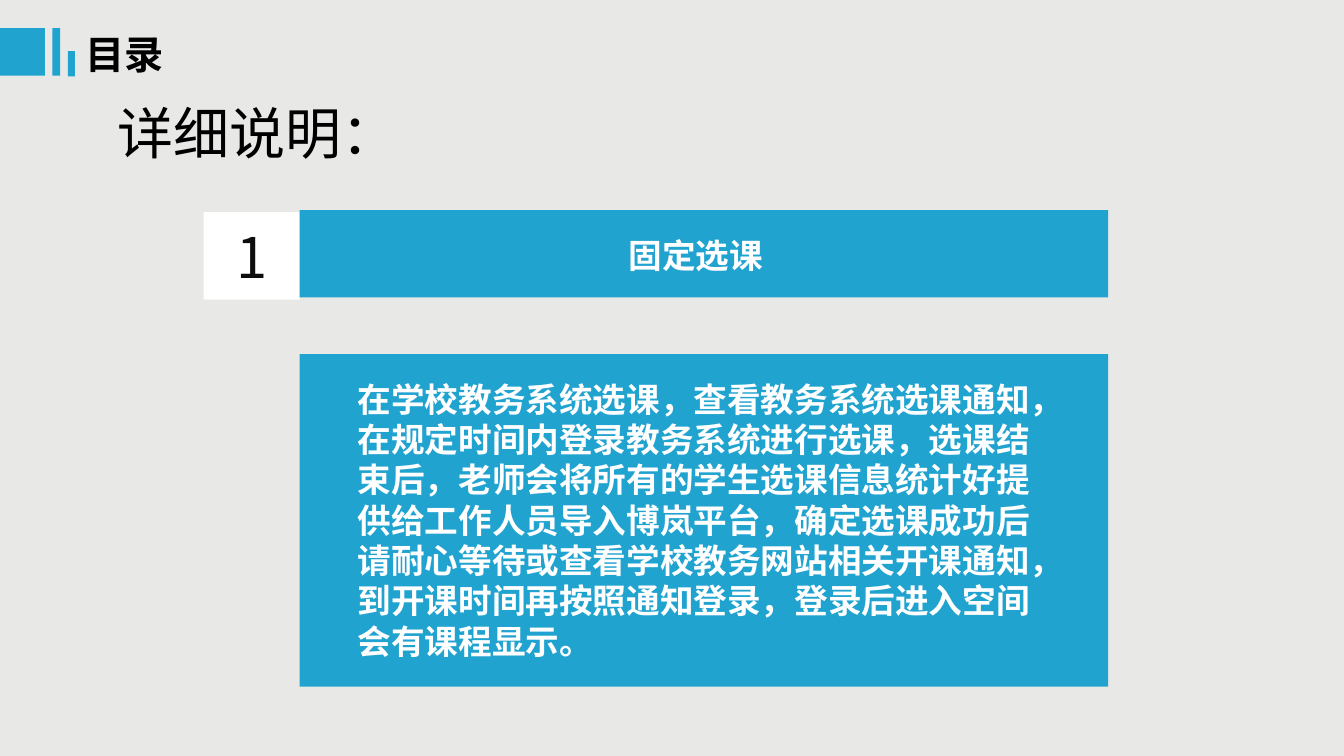
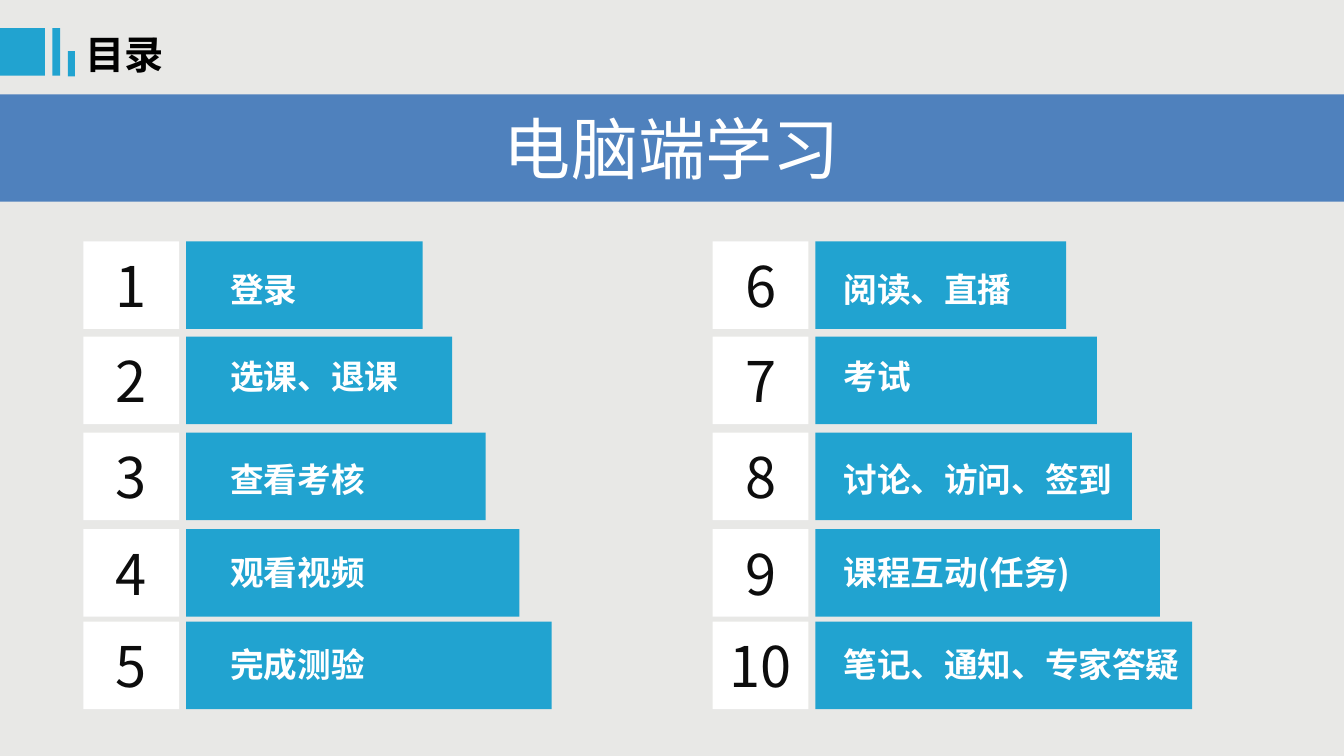
from pptx import Presentation
from pptx.dml.color import RGBColor
from pptx.enum.shapes import MSO_SHAPE as SHAPE
from pptx.enum.text import MSO_ANCHOR as ANCHOR, MSO_AUTO_SIZE as AUTO, PP_ALIGN as ALIGN
from pptx.oxml.ns import qn
from pptx.util import Pt
from lxml import etree


def rgb(value):
    return RGBColor.from_string(value)


class Deck:
    """Shared style and the slide being built."""
    BACK, CYAN, BLUE = "E8E8E6", "21A3D0", "4F81BD"
    WHITE, BLACK, INK = "FFFFFF", "000000", "0D0D0D"
    FONT = "Noto Sans CJK SC"
    MARKS = [(0, 20, 32, 34), (37.5, 20, 5.5, 34), (48.5, 36.5, 5, 18)]
    ROW_H, NUM_W = 62.5, 68.5

    def __init__(self):
        self.prs = Presentation()
        self.prs.slide_width, self.prs.slide_height = Pt(960), Pt(540)
        fill = self.prs.slide_master.background.fill
        fill.solid()
        fill.fore_color.rgb = rgb(self.BACK)

    def new_slide(self, title, layout):
        self.s = self.prs.slides.add_slide(self.prs.slide_layouts[layout])
        for mark in self.MARKS:
            self.rect(*mark, self.CYAN)
        sp = self.s.shapes.title
        self.place(sp, 54, 18, 92, 41)
        self.set_text(sp, title, 28, self.BLACK, bold=True)

    def place(self, sp, x, y, w, h):
        sp.left, sp.top, sp.width, sp.height = Pt(x), Pt(y), Pt(w), Pt(h)

    def paint(self, sp, color):
        sp.fill.solid()
        sp.fill.fore_color.rgb = rgb(color)

    def set_text(self, sp, text, size, color, bold=False, align=ALIGN.LEFT,
                 anchor=ANCHOR.TOP, inset=(7.2, 3.6, 7.2), latin=FONT):
        """Fill a shape with one styled paragraph; inset is left, top, right."""
        tf = sp.text_frame
        tf.text = text
        tf.word_wrap, tf.auto_size, tf.vertical_anchor = True, AUTO.NONE, anchor
        tf.margin_left, tf.margin_top, tf.margin_right = map(Pt, inset)
        tf.margin_bottom = Pt(3.6)
        p = tf.paragraphs[0]
        p.alignment, p.space_before = align, Pt(0)
        font = p.runs[0].font
        font.size, font.bold, font.name = Pt(size), bold, latin
        font.color.rgb = rgb(color)
        # East Asian typeface
        rpr = p.runs[0]._r.get_or_add_rPr()
        rpr.find(qn("a:latin")).addnext(
            etree.Element(qn("a:ea"), typeface=self.FONT))

    def rect(self, x, y, w, h, color):
        sp = self.s.shapes.add_shape(SHAPE.RECTANGLE, Pt(x), Pt(y), Pt(w), Pt(h))
        sp.shadow.inherit = False
        sp.line.fill.background()
        self.paint(sp, color)
        return sp

    def number(self, x, y, n):
        sp = self.rect(x, y, self.NUM_W, self.ROW_H, self.WHITE)
        self.set_text(sp, str(n), 40, self.INK, align=ALIGN.CENTER, anchor=ANCHOR.MIDDLE)

    def bar(self, x, y, w, text, left, top):
        sp = self.rect(x, y, w, self.ROW_H, self.CYAN)
        self.set_text(sp, text, 24, self.WHITE, bold=True, inset=(left, top, 0))

    def banner(self, text):
        sp = self.rect(0, 67.5, 960, 76.5, self.BLUE)
        self.set_text(sp, text, 48, self.WHITE, align=ALIGN.CENTER, anchor=ANCHOR.MIDDLE)

    def heading(self, text):
        sp = self.s.shapes.add_textbox(Pt(77), Pt(67), Pt(613), Pt(55))
        self.set_text(sp, text, 40, self.BLACK, latin="Calibri")

    def body(self, x, y, w, h, text):
        sp = self.s.placeholders[1]
        self.place(sp, x, y, w, h)
        self.paint(sp, self.CYAN)
        self.set_text(sp, text, 24, self.WHITE, bold=True, inset=(41.5, 17.5, 33))
        # No bullet, no hanging indent
        ppr = sp.text_frame.paragraphs[0]._p.get_or_add_pPr()
        ppr.set("marL", "0")
        ppr.set("indent", "0")
        etree.SubElement(ppr, qn("a:buNone"))


def main():
    deck = Deck()

    # Slide 1: course selection in detail
    deck.new_slide("目录", layout=1)
    deck.heading("详细说明：")
    deck.number(145.5, 151.5, 1)
    deck.bar(214, 150, 577.5, "固定选课", left=235, top=18)
    deck.body(214, 253, 577.5, 237.5,
              "在学校教务系统选课，查看教务系统选课通知，在规定时间内登录教务系统进行选课，"
              "选课结束后，老师会将所有的学生选课信息统计好提供给工作人员导入博岚平台，"
              "确定选课成功后请耐心等待或查看学校教务网站相关开课通知，"
              "到开课时间再按照通知登录，登录后进入空间会有课程显示。")

    # Slide 2: two columns of numbered topics
    deck.new_slide("目录", layout=5)
    deck.banner("电脑端学习")
    rows = [(172.5, 19.5), (240.5, 13.5), (309, 18.5), (378, 16.5), (444, 16)]
    columns = [
        (59.5, 31.5, [("登录", 169), ("选课、退课", 190), ("查看考核", 214),
                      ("观看视频", 238), ("完成测验", 261)]),
        (509, 20, [("阅读、直播", 179), ("考试", 201), ("讨论、访问、签到", 226),
                   ("课程互动(任务)", 246), ("笔记、通知、专家答疑", 269)]),
    ]
    for c, (x, left, topics) in enumerate(columns):
        for i, ((y, top), (text, w)) in enumerate(zip(rows, topics), 1):
            deck.number(x, y, c * len(rows) + i)
            deck.bar(x + 73.5, y, w, text, left, top)

    deck.prs.save("out.pptx")


if __name__ == "__main__":
    main()
